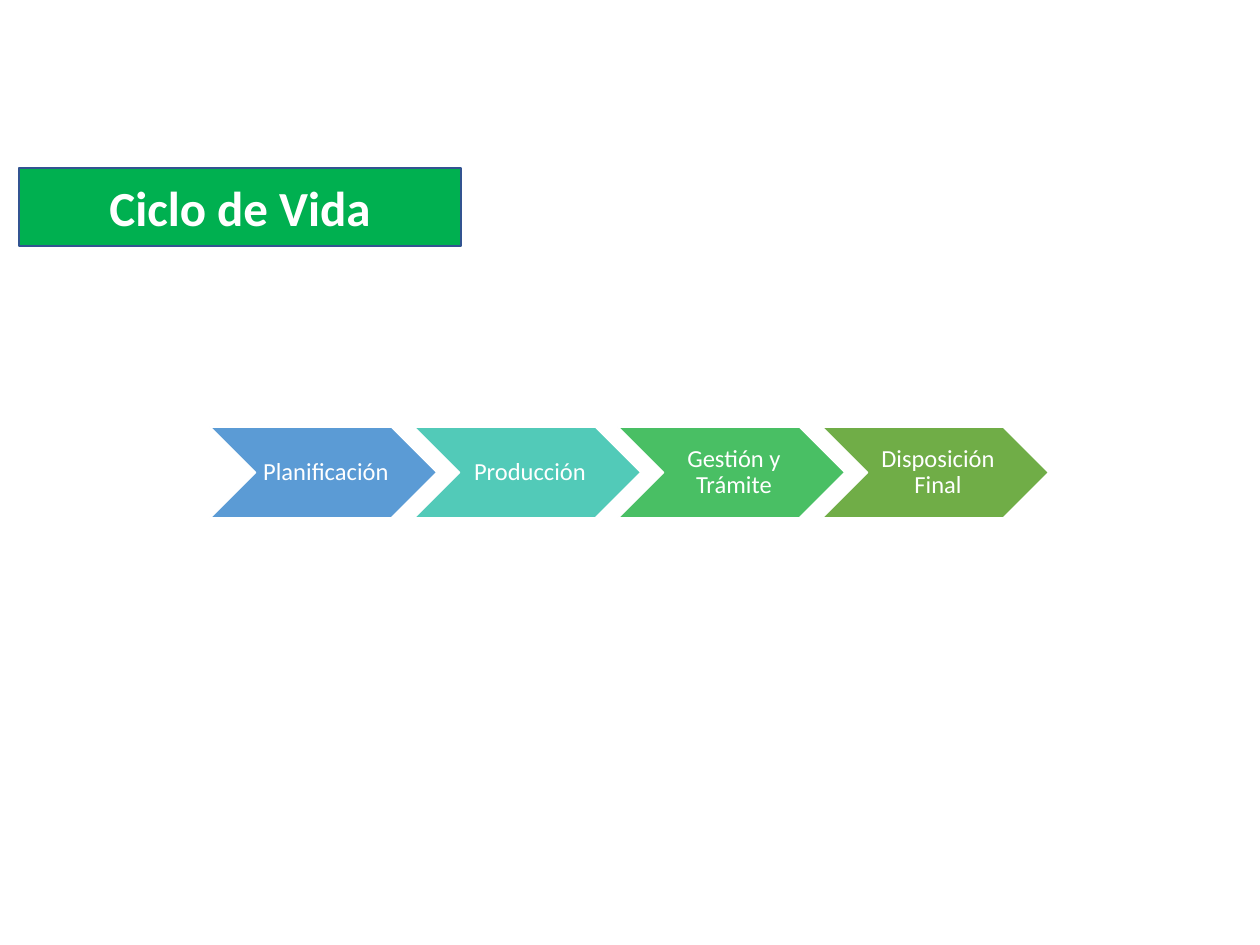
import pptx
import pptx.dml.color
import pptx.enum.shapes
import pptx.enum.text
import pptx.oxml
import pptx.oxml.ns
import pptx.util

PX = 914400 / 126
COLORS = {
    "title": "00B050",
    "title_line": "325491",
    "white": "FFFFFF",
    "planning": "5B9BD5",
    "production": "52CAB8",
    "processing": "49BF64",
    "disposal": "70AD47",
}
STAGES = [
    ("Planificación", "planning"),
    ("Producción", "production"),
    ("Gestión y Trámite", "processing"),
    ("Disposición Final", "disposal"),
]


def box(*lengths):
    return [round(length * PX) for length in lengths]


def paint(shape, fill, line):
    shape.fill.solid()
    shape.fill.fore_color.rgb = pptx.dml.color.RGBColor.from_string(COLORS[fill])
    shape.line.color.rgb = pptx.dml.color.RGBColor.from_string(COLORS[line])
    shape.line.width = pptx.util.Pt(1)


presentation = pptx.Presentation()
presentation.slide_width, presentation.slide_height = box(1260, 945)
slide = presentation.slides.add_slide(presentation.slide_layouts[5])

# Title in a rounded box
title = slide.shapes.title
title.left, title.top, title.width, title.height = box(19, 168, 442, 78)
geometry = pptx.oxml.parse_xml(
    f'<a:prstGeom {pptx.oxml.ns.nsdecls("a")} prst="roundRect"><a:avLst/></a:prstGeom>'
)
title._element.spPr.append(geometry)
paint(title, "title", "title_line")
title.text_frame.text = "Ciclo de Vida"
title.text_frame.vertical_anchor = pptx.enum.text.MSO_ANCHOR.MIDDLE
paragraph = title.text_frame.paragraphs[0]
paragraph.alignment = pptx.enum.text.PP_ALIGN.CENTER
font = paragraph.runs[0].font
font.name, font.size, font.bold = "Calibri", pptx.util.Pt(28), True
font.color.rgb = pptx.dml.color.RGBColor.from_string(COLORS["white"])

# Life cycle: one chevron and label per stage
cycle = slide.shapes.add_group_shape()
for index, (name, color) in enumerate(STAGES):
    left = 210 + 204 * index
    chevron = cycle.shapes.add_shape(
        pptx.enum.shapes.MSO_SHAPE.CHEVRON, *box(left, 427, 227, 91)
    )
    chevron.shadow.inherit = False
    paint(chevron, color, "white")

    label = cycle.shapes.add_textbox(*box(left + 45, 427, 137, 91))
    frame = label.text_frame
    frame.word_wrap = True
    frame.vertical_anchor = pptx.enum.text.MSO_ANCHOR.MIDDLE
    frame.margin_left, frame.margin_top, frame.margin_right, frame.margin_bottom = box(
        7, 2, 2, 2
    )
    frame.text = name
    paragraph = frame.paragraphs[0]
    paragraph.alignment = pptx.enum.text.PP_ALIGN.CENTER
    paragraph.line_spacing = 0.9
    font = paragraph.runs[0].font
    font.name, font.size = "Calibri", pptx.util.Pt(14)
    font.color.rgb = pptx.dml.color.RGBColor.from_string(COLORS["white"])

presentation.save("out.pptx")
